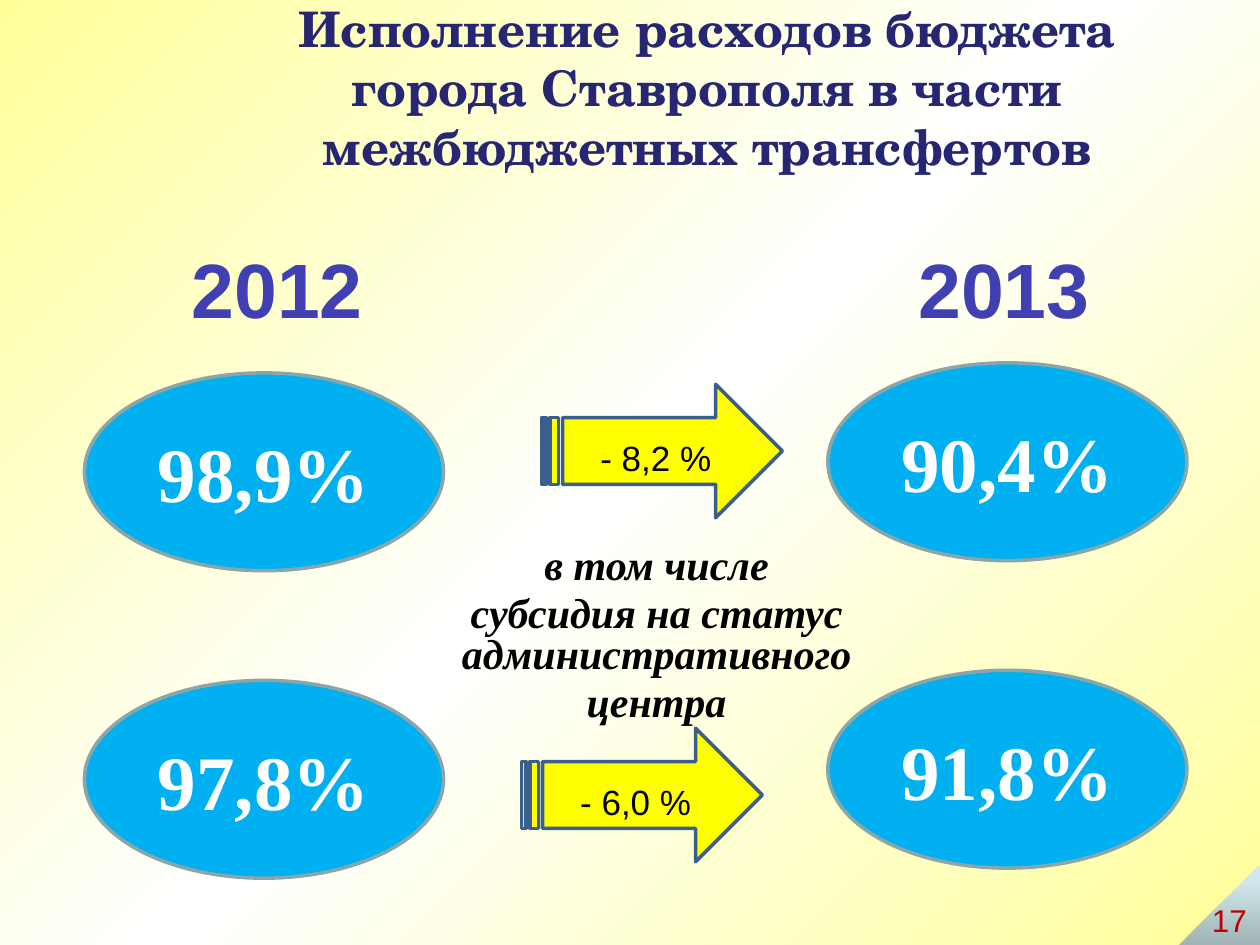
import pptx
import pptx.util
import pptx.oxml
import pptx.oxml.ns
from pptx.dml.color import RGBColor
from pptx.enum.shapes import MSO_SHAPE
from pptx.enum.text import MSO_ANCHOR, PP_ALIGN
from pptx.util import Inches

NAVY = RGBColor(0x26, 0x26, 0x73)
INDIGO = RGBColor(0x40, 0x40, 0xB3)
SKY = RGBColor(0x00, 0xB0, 0xF0)
GREY = RGBColor(0x8A, 0xA6, 0xA8)
YELLOW = RGBColor(0xFF, 0xFF, 0x00)
STEEL = RGBColor(0x3A, 0x5F, 0x8C)
WHITE = RGBColor(0xFF, 0xFF, 0xFF)
BLACK = RGBColor(0x00, 0x00, 0x00)
RED = RGBColor(0xC0, 0x00, 0x00)
BACKGROUND_STOPS = [(0, "FFFF99"), (50, "FFFFFF"), (100, "FFFF99")]
CORNER_STOPS = [(0, "A0B3B5"), (80, "D0E8EB"), (100, "D1EAEC")]

TITLE = ["Исполнение расходов бюджета",
         "города Ставрополя в части межбюджетных трансфертов"]
SUBSIDY = ["в том числе", "субсидия на статус административного", "центра"]
YEARS = [("2012", 1.41, 1.58, PP_ALIGN.CENTER), ("2013", 7.19, 1.73, PP_ALIGN.LEFT)]
COLUMNS = [(0.67, 2.96, ["98,9%", "97,8%"]), (6.57, 2.88, ["90,4%", "91,8%"])]
ROW_STEP = 2.44
CHANGES = [("- 8,2 %", 4.3, 3.05), ("- 6,0 %", 4.14, 5.78)]
PAGE_NUMBER = "17"


def write(shape, lines, font, size, color, bold=False, italic=False,
          align=PP_ALIGN.CENTER, anchor=MSO_ANCHOR.MIDDLE, wrap=True):
    frame = shape.text_frame
    frame.word_wrap = wrap
    frame.vertical_anchor = anchor
    frame.text = "\n".join(lines)
    for para in frame.paragraphs:
        para.alignment = align
        para.font.name = font
        para.font.size = pptx.util.Pt(size)
        para.font.color.rgb = color
        para.font.bold = bold
        para.font.italic = italic
    return frame


def add_text(page, area, lines, *style, **options):
    box = page.shapes.add_textbox(*map(Inches, area))
    return write(box, lines, *style, **options)


def add_figure(page, kind, area, fill, line):
    shape = page.shapes.add_shape(kind, *map(Inches, area))
    shape.shadow.inherit = False
    shape.fill.solid()
    shape.fill.fore_color.rgb = fill
    shape.line.color.rgb = line
    shape.line.width = pptx.util.Pt(2)
    return shape


def set_gradient(fill, root, stops, angle):
    fill.gradient()
    gradient = root.find(".//" + pptx.oxml.ns.qn("a:gradFill"))
    entries = "".join(f'<a:gs pos="{pos * 1000}"><a:srgbClr val="{color}"/></a:gs>'
                      for pos, color in stops)
    gradient.getparent().replace(gradient, pptx.oxml.parse_xml(
        f'<a:gradFill {pptx.oxml.ns.nsdecls("a")} rotWithShape="1">'
        f'<a:gsLst>{entries}</a:gsLst>'
        f'<a:lin ang="{angle * 60000}" scaled="0"/></a:gradFill>'))


def add_corner(page):
    corner = page.shapes.add_shape(MSO_SHAPE.RIGHT_TRIANGLE,
                                   *map(Inches, (9.36, 6.87, 0.64, 0.63)))
    corner.line.fill.background()
    properties = corner.element.spPr
    set_gradient(corner.fill, properties, CORNER_STOPS, 270)
    properties.find(pptx.oxml.ns.qn("a:xfrm")).set("flipH", "1")
    properties.append(pptx.oxml.parse_xml(
        f'<a:effectLst {pptx.oxml.ns.nsdecls("a")}>'
        '<a:outerShdw blurRad="39370" dist="22860" dir="5400000" rotWithShape="0">'
        '<a:srgbClr val="000000"><a:alpha val="35000"/></a:srgbClr>'
        '</a:outerShdw></a:effectLst>'))


def main():
    deck = pptx.Presentation()
    deck.slide_width, deck.slide_height = Inches(10), Inches(7.5)
    page = deck.slides.add_slide(deck.slide_layouts[6])
    set_gradient(page.background.fill, page.element, BACKGROUND_STOPS, 45)

    add_text(page, (1.22, 0.06, 8.78, 1.26), TITLE, "TeX Gyre Schola", 28, NAVY, bold=True)

    for left, top, values in COLUMNS:
        for row, value in enumerate(values):
            oval = add_figure(page, MSO_SHAPE.OVAL,
                              (left, top + row * ROW_STEP, 2.85, 1.57), SKY, GREY)
            write(oval, [value], "Times New Roman", 44, WHITE, bold=True)

    note = add_text(page, (2.32, 4.3, 5.28, 1.56), SUBSIDY, "Times New Roman", 24, BLACK,
                    bold=True, italic=True, anchor=MSO_ANCHOR.TOP)
    note.margin_left = Inches(0.6)
    for para in note.paragraphs:
        para.line_spacing = 0.8
        para.space_before = pptx.util.Pt(4.8)

    for year, left, width, align in YEARS:
        add_text(page, (left, 1.87, width, 0.84), [year], "Arial", 44, INDIGO,
                 bold=True, align=align, anchor=MSO_ANCHOR.TOP)

    for change, left, top in CHANGES:
        arrow = add_figure(page, MSO_SHAPE.STRIPED_RIGHT_ARROW,
                           (left, top, 1.91, 1.06), YELLOW, STEEL)
        write(arrow, [change], "Arial", 20, BLACK, anchor=MSO_ANCHOR.BOTTOM)

    add_corner(page)
    add_text(page, (9.52, 7.1, 0.48, 0.4), [PAGE_NUMBER], "Arial", 18, RED,
             align=PP_ALIGN.LEFT, anchor=MSO_ANCHOR.TOP, wrap=False)
    deck.save("out.pptx")


if __name__ == "__main__":
    main()
